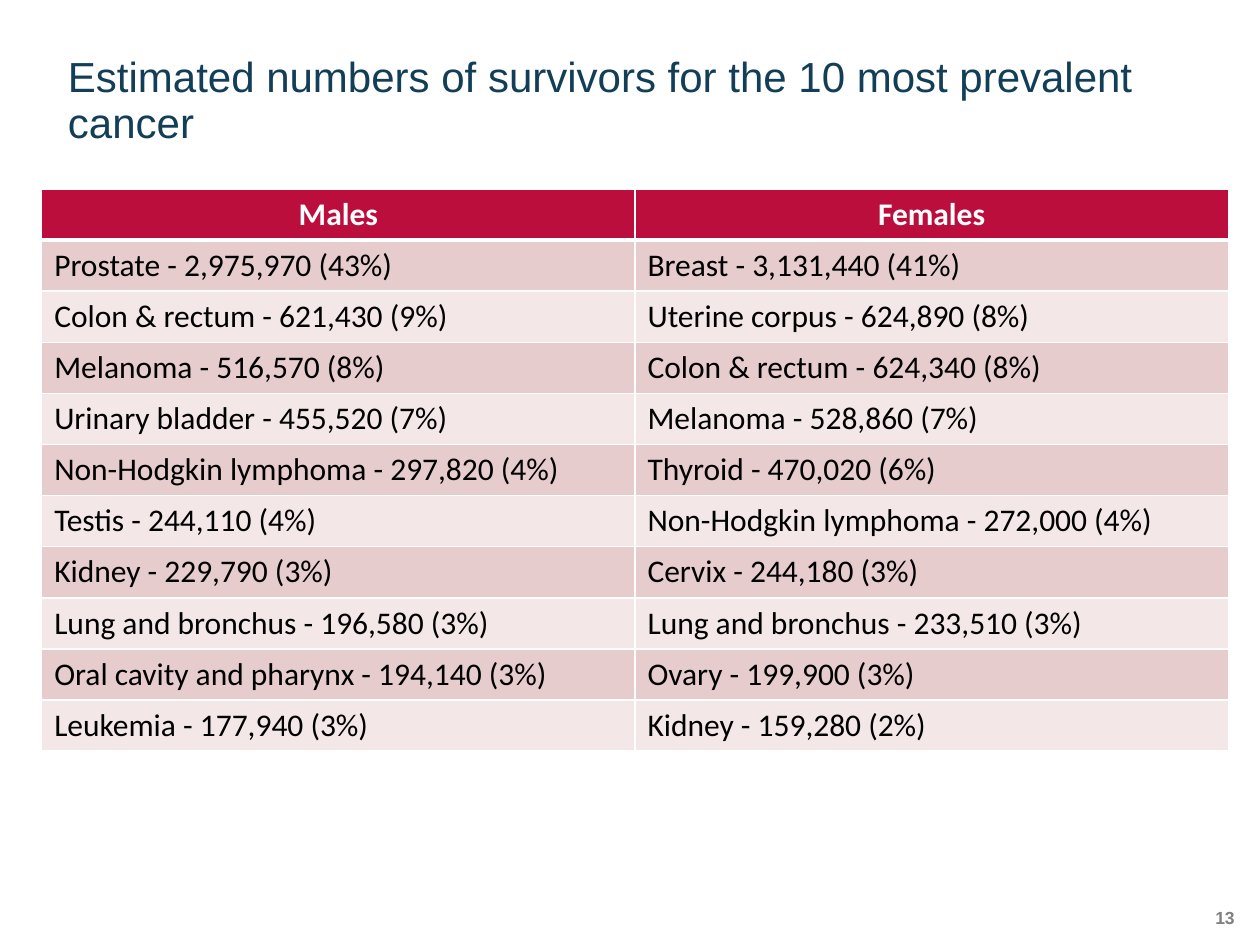
from pptx import Presentation
from pptx import util as u
from pptx.dml.color import RGBColor
from pptx.enum import text
from pptx.oxml import parse_xml
from pptx.oxml.ns import nsdecls

TITLE = "Estimated numbers of survivors for the 10 most prevalent cancer"
PAGE_NUMBER = "13"
HEADINGS = ("Males", "Females")
SURVIVORS = [
    ("Prostate - 2,975,970 (43%)", "Breast - 3,131,440 (41%)"),
    ("Colon & rectum - 621,430 (9%)", "Uterine corpus - 624,890 (8%)"),
    ("Melanoma - 516,570 (8%)", "Colon & rectum - 624,340 (8%)"),
    ("Urinary bladder - 455,520 (7%)", "Melanoma - 528,860 (7%)"),
    ("Non-Hodgkin lymphoma - 297,820 (4%)", "Thyroid - 470,020 (6%)"),
    ("Testis - 244,110 (4%)", "Non-Hodgkin lymphoma - 272,000 (4%)"),
    ("Kidney - 229,790 (3%)", "Cervix - 244,180 (3%)"),
    ("Lung and bronchus - 196,580 (3%)", "Lung and bronchus - 233,510 (3%)"),
    ("Oral cavity and pharynx - 194,140 (3%)", "Ovary - 199,900 (3%)"),
    ("Leukemia - 177,940 (3%)", "Kidney - 159,280 (2%)"),
]

NAVY = RGBColor(0x12, 0x3E, 0x57)
CRIMSON = RGBColor(0xBB, 0x0E, 0x3D)
ROSE = RGBColor(0xE7, 0xCC, 0xCE)
BLUSH = RGBColor(0xF3, 0xE7, 0xE8)
GREY = RGBColor(0x7F, 0x7F, 0x7F)
WHITE = RGBColor(0xFF, 0xFF, 0xFF)
BLACK = RGBColor(0, 0, 0)

ROW_HEIGHT = u.Cm(1.03)
COLUMN_WIDTH = u.Cm(11.96)


def place(box, left, top, width, height):
    box.left, box.top = u.Cm(left), u.Cm(top)
    box.width, box.height = u.Cm(width), u.Cm(height)


def write(frame, words, font, size, color, bold=False, align=text.PP_ALIGN.LEFT):
    para = frame.paragraphs[0]
    para.alignment = align
    span = para.add_run()
    span.text = words
    span.font.name = font
    span.font.size = u.Pt(size)
    span.font.bold = bold
    span.font.color.rgb = color
    return para


def clear_margins(frame):
    frame.margin_left = frame.margin_right = 0
    frame.margin_top = frame.margin_bottom = 0
    frame.word_wrap = True


def add_borders(cell, bottom):
    properties = cell._tc.get_or_add_tcPr()
    widths = {"lnL": 1, "lnR": 1, "lnT": 1, "lnB": bottom}
    for position, (side, points) in enumerate(widths.items()):
        properties.insert(position, parse_xml(
            f'<a:{side} {nsdecls("a")} w="{u.Pt(points)}"><a:solidFill>'
            f'<a:srgbClr val="{WHITE}"/></a:solidFill></a:{side}>'))


def add_title(page):
    title = page.shapes.title
    place(title, 1.37, 1.14, 22.68, 1.83)
    frame = title.text_frame
    clear_margins(frame)
    frame.auto_size = text.MSO_AUTO_SIZE.NONE
    frame.vertical_anchor = text.MSO_ANCHOR.BOTTOM
    write(frame, TITLE, "Arial", 24, NAVY).line_spacing = 0.9


def add_survivor_table(page):
    rows = [HEADINGS] + SURVIVORS
    table = page.shapes.add_table(
        len(rows), len(HEADINGS), u.Cm(0.84), u.Cm(3.81),
        COLUMN_WIDTH * len(HEADINGS), ROW_HEIGHT * len(rows)).table
    for column in table.columns:
        column.width = COLUMN_WIDTH
    for index, labels in enumerate(rows):
        header = index == 0
        fill = CRIMSON if header else (ROSE if index % 2 else BLUSH)
        color = WHITE if header else BLACK
        align = text.PP_ALIGN.CENTER if header else text.PP_ALIGN.LEFT
        table.rows[index].height = ROW_HEIGHT
        for cell, label in zip(table.rows[index].cells, labels):
            cell.fill.solid()
            cell.fill.fore_color.rgb = fill
            add_borders(cell, 3 if header else 1)
            write(cell.text_frame, label, "Calibri", 18, color, header, align)


def add_page_number(page):
    box = page.shapes.add_textbox(u.Cm(24.03), u.Cm(18.29), u.Cm(0.86), u.Cm(0.51))
    clear_margins(box.text_frame)
    write(box.text_frame, PAGE_NUMBER, "Arial", 10, GREY, True, text.PP_ALIGN.RIGHT)


def main():
    deck = Presentation()
    deck.slide_width, deck.slide_height = u.Cm(25.4), u.Cm(19.05)
    page = deck.slides.add_slide(deck.slide_layouts[5])
    add_title(page)
    add_survivor_table(page)
    add_page_number(page)
    deck.save("out.pptx")


if __name__ == "__main__":
    main()
